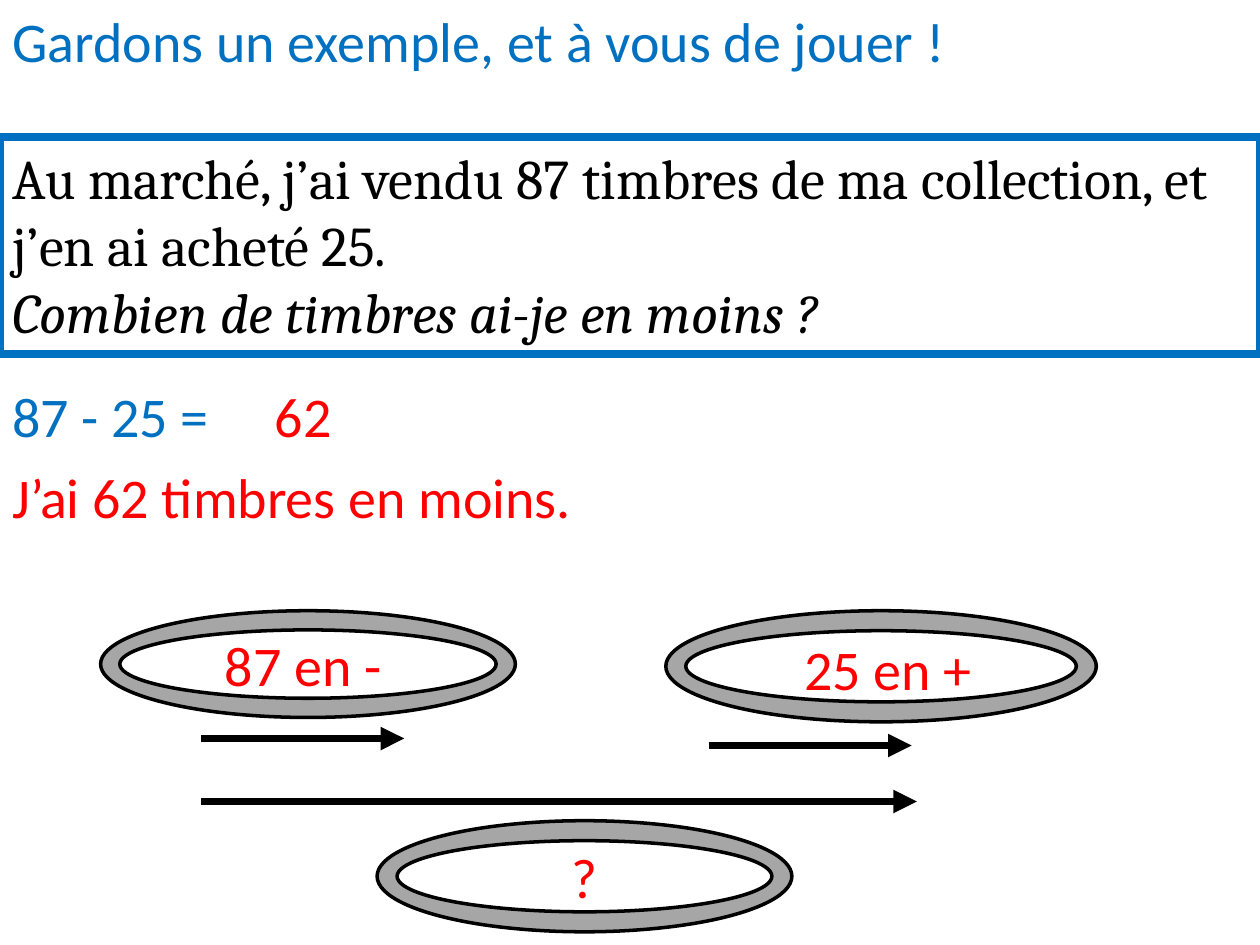
from lxml import etree
from pptx import Presentation
from pptx.dml.color import RGBColor
from pptx.enum.shapes import MSO_CONNECTOR as Connector, MSO_SHAPE as Shape
from pptx.enum.text import MSO_ANCHOR as Anchor, MSO_AUTO_SIZE as AutoSize, PP_ALIGN as Align
from pptx.oxml.ns import qn
from pptx.util import Pt

BLUE, RED, BLACK, GREY = "0070C0", "FF0000", "000000", "A6A6A6"
LINE_HEIGHT = 46


def colour(value):
    return RGBColor.from_string(value)


def write(para, text, font="Calibri", size=32, ink=BLACK, italic=False, align=Align.LEFT):
    para.alignment = align
    span = para.add_run()
    span.text = text
    span.font.name = font
    span.font.size = Pt(size)
    span.font.italic = italic
    span.font.color.rgb = colour(ink)


def prepare(frame):
    frame.word_wrap = True
    frame.vertical_anchor = Anchor.TOP
    frame.auto_size = AutoSize.SHAPE_TO_FIT_TEXT


def add_label(page, left, top, width, text, **style):
    box = page.shapes.add_textbox(Pt(left), Pt(top), Pt(width), Pt(LINE_HEIGHT))
    prepare(box.text_frame)
    write(box.text_frame.paragraphs[0], text, **style)


def add_title(page, left, top, width, text):
    title = page.shapes.title
    title.left, title.top = Pt(left), Pt(top)
    title.width, title.height = Pt(width), Pt(LINE_HEIGHT)
    prepare(title.text_frame)
    write(title.text_frame.paragraphs[0], text, ink=BLUE)


def add_problem(page, left, top, width, height, statement, question):
    box = page.shapes.add_shape(Shape.RECTANGLE, Pt(left), Pt(top), Pt(width), Pt(height))
    box.shadow.inherit = False
    box.fill.background()
    box.line.color.rgb = colour(BLUE)
    box.line.width = Pt(4.5)
    frame = box.text_frame
    prepare(frame)
    write(frame.paragraphs[0], statement, font="Cambria")
    write(frame.add_paragraph(), question, font="Cambria", italic=True)


def add_answer(page, left, top, width):
    add_label(page, left, top, 164, "87 - 25 =", ink=BLUE)
    add_label(page, left + 150, top, 164, "62", ink=RED)
    add_label(page, left, top + LINE_HEIGHT, width, "J’ai 62 timbres en moins.", ink=RED)


def add_ring(page, left, top, width, height):
    ring = page.shapes.add_shape(Shape.DONUT, Pt(left), Pt(top), Pt(width), Pt(height))
    ring.adjustments[0] = 0.18
    ring.shadow.inherit = False
    ring.fill.solid()
    ring.fill.fore_color.rgb = colour(GREY)
    ring.line.color.rgb = colour(BLACK)
    ring.line.width = Pt(2)


def add_arrow(page, left, top, length):
    arrow = page.shapes.add_connector(
        Connector.STRAIGHT, Pt(left), Pt(top), Pt(left + length), Pt(top))
    arrow.line.color.rgb = colour(BLACK)
    arrow.line.width = Pt(4.5)
    etree.SubElement(arrow.line._get_or_add_ln(), qn("a:tailEnd"), type="triangle")
    etree.SubElement(arrow._element.spPr, qn("a:effectLst"))


def add_diagram(page, left, top):
    # Each step: ring box, label position, arrow start and length, label
    steps = [
        ((0, 0, 237, 61), (64, 8), (57.5, 73, 116), "87 en -", Align.LEFT),
        ((323, 0, 246, 63.5), (395, 10), (347.5, 77, 116), "25 en +", Align.LEFT),
        ((158, 120, 237, 63.5), (213, 129), (57.5, 109, 409), "?", Align.CENTER),
    ]
    for ring, label, arrow, text, align in steps:
        add_ring(page, left + ring[0], top + ring[1], *ring[2:])
        add_arrow(page, left + arrow[0], top + arrow[1], arrow[2])
        add_label(page, left + label[0], top + label[1], 127.5, text, ink=RED, align=align)


def main():
    deck = Presentation()
    deck.slide_width, deck.slide_height = Pt(720), Pt(540)
    page = deck.slides.add_slide(deck.slide_layouts[5])
    add_title(page, 0, 0, 720, "Gardons un exemple, et à vous de jouer !")
    add_problem(page, 0, 78.5, 720, 124,
                "Au marché, j’ai vendu 87 timbres de ma collection, et j’en ai acheté 25.",
                "Combien de timbres ai-je en moins ?")
    add_answer(page, 0, 214.5, 720)
    add_diagram(page, 57.5, 349)
    deck.save("out.pptx")


if __name__ == "__main__":
    main()
